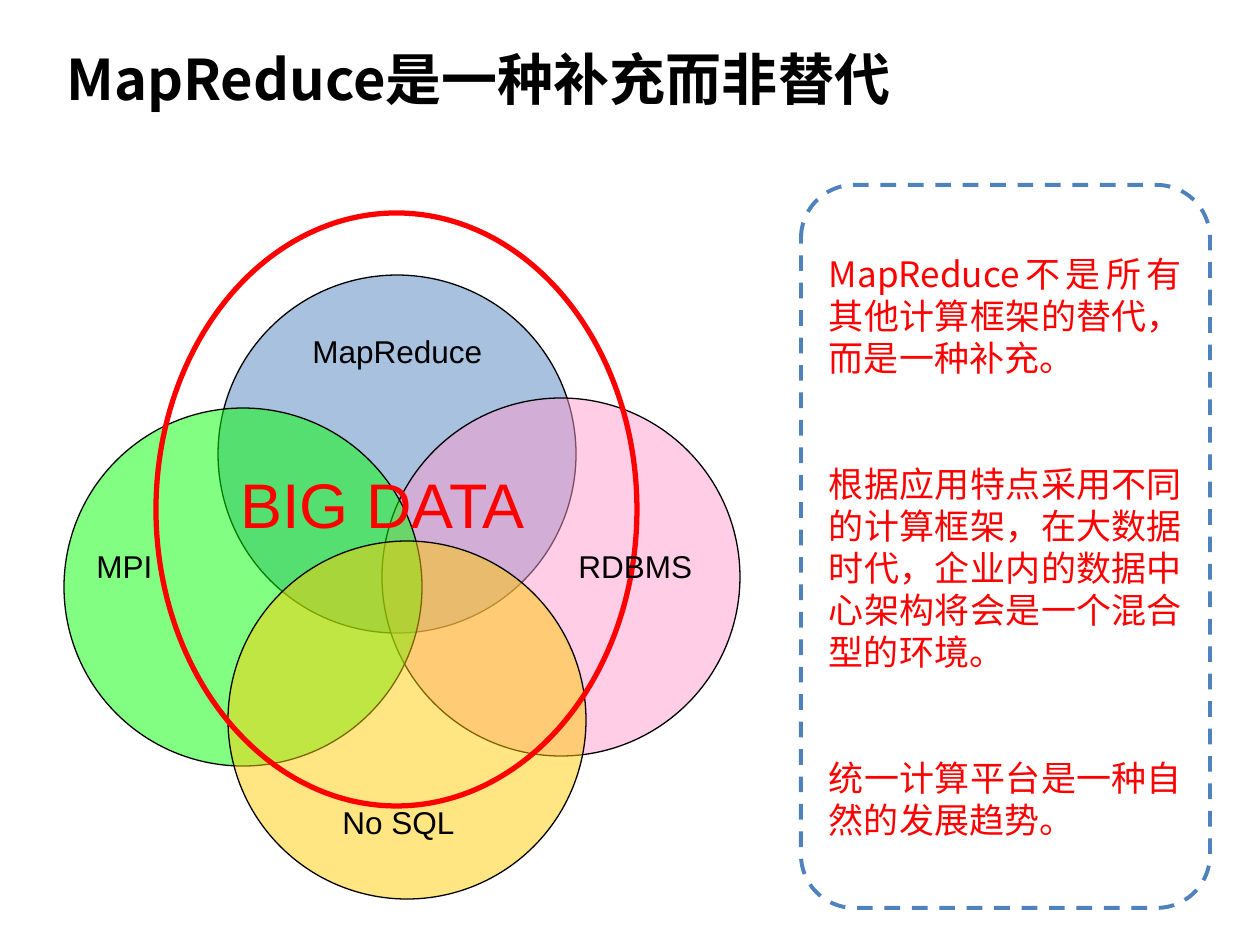
"""Build a slide with a four-circle Venn diagram beside a dashed text panel."""
import pptx
import pptx.util
import pptx.dml.color
import pptx.enum.dml
import pptx.enum.shapes
import pptx.enum.text
import pptx.oxml.ns
from lxml import etree

PX = 914400 // 126
CJK = "Noto Sans CJK SC"
SHAPE = pptx.enum.shapes.MSO_SHAPE
ALIGN = pptx.enum.text.PP_ALIGN
MIDDLE = pptx.enum.text.MSO_ANCHOR.MIDDLE
TOP = pptx.enum.text.MSO_ANCHOR.TOP

TITLE = "MapReduce是一种补充而非替代"
TITLE_BOX = (54, 38, 1116, 81)
DIAMETER = 358
CIRCLES = [(218, 275, "4F81BD"), (382, 398, "FF99CC"),
           (64, 408, "00FF00"), (228, 541, "FFCC00")]
RING = (156, 213, 481, 593)
LABELS = [("MapReduce", 300, 326, 197), ("MPI", 84, 541, 81),
          ("No SQL", 330, 797, 139), ("RDBMS", 566, 541, 139)]
LABEL_HEIGHT = 50
CENTER = "BIG DATA"
CENTER_BOX = (228, 459, 358, 88)
PANEL_BOX = (801, 185, 409, 723)
PANEL = ["MapReduce不是所有其他计算框架的替代，而是一种补充。",
         "根据应用特点采用不同的计算框架，在大数据时代，企业内的数据中心架构将会是一个混合型的环境。",
         "统一计算平台是一种自然的发展趋势。"]


def color(value):
    return pptx.dml.color.RGBColor.from_string(value)


def emu(box):
    return [n * PX for n in box]


def apply(target, values):
    for name, value in values.items():
        setattr(target, name, value)


def write(s, texts, font, size, rgb, bold=False, wrap=True, anchor=TOP, **layout):
    tf = s.text_frame
    apply(tf, {"word_wrap": wrap, "vertical_anchor": anchor})
    for i, text in enumerate(texts):
        p = tf.paragraphs[0] if i == 0 else tf.add_paragraph()
        apply(p, {"alignment": ALIGN.LEFT, **layout})
        if i == 0:
            p.space_before = pptx.util.Pt(0)
        r = p.add_run()
        r.text = text
        apply(r.font, {"name": font, "size": pptx.util.Pt(size), "bold": bold})
        r.font.color.rgb = color(rgb)
        ea = etree.SubElement(r.font._element, pptx.oxml.ns.qn("a:ea"))
        ea.set("typeface", font)


def add_text(slide, box, text, *style, **layout):
    s = slide.shapes.add_textbox(*emu(box))
    write(s, [text], *style, **layout)


def add_outline(slide, kind, box, line, width, fill=None, opacity=None):
    s = slide.shapes.add_shape(kind, *emu(box))
    s.shadow.inherit = False
    s.line.color.rgb = color(line)
    s.line.width = pptx.util.Pt(width)
    if fill is None:
        s.fill.background()
        return s
    s.fill.solid()
    s.fill.fore_color.rgb = color(fill)
    if opacity is not None:
        rgb = s.fill._xPr.find(".//" + pptx.oxml.ns.qn("a:srgbClr"))
        alpha = etree.SubElement(rgb, pptx.oxml.ns.qn("a:alpha"))
        alpha.set("val", str(opacity * 1000))
    return s


def main():
    prs = pptx.Presentation()
    apply(prs, {"slide_width": 1260 * PX, "slide_height": 945 * PX})
    slide = prs.slides.add_slide(prs.slide_layouts[6])

    add_text(slide, TITLE_BOX, TITLE, CJK, 32, "000000", bold=True, anchor=MIDDLE)
    for x, y, fill in CIRCLES:
        add_outline(slide, SHAPE.OVAL, (x, y, DIAMETER, DIAMETER), "000000", 0.75, fill, 49)
    add_outline(slide, SHAPE.OVAL, RING, "FF0000", 3)
    for text, x, y, width in LABELS:
        add_text(slide, (x, y, width, LABEL_HEIGHT), text, "Arial", 18, "000000", wrap=False)
    add_text(slide, CENTER_BOX, CENTER, "Arial", 36, "FF0000")

    panel = add_outline(slide, SHAPE.ROUNDED_RECTANGLE, PANEL_BOX, "4F81BD", 2.25, "FFFFFF")
    panel.adjustments[0] = 0.13
    panel.line.dash_style = pptx.enum.dml.MSO_LINE.DASH
    write(panel, PANEL, CJK, 20, "FF0000", anchor=MIDDLE, alignment=ALIGN.JUSTIFY,
          line_spacing=pptx.util.Pt(24), space_before=pptx.util.Pt(48))
    prs.save("out.pptx")


if __name__ == "__main__":
    main()
